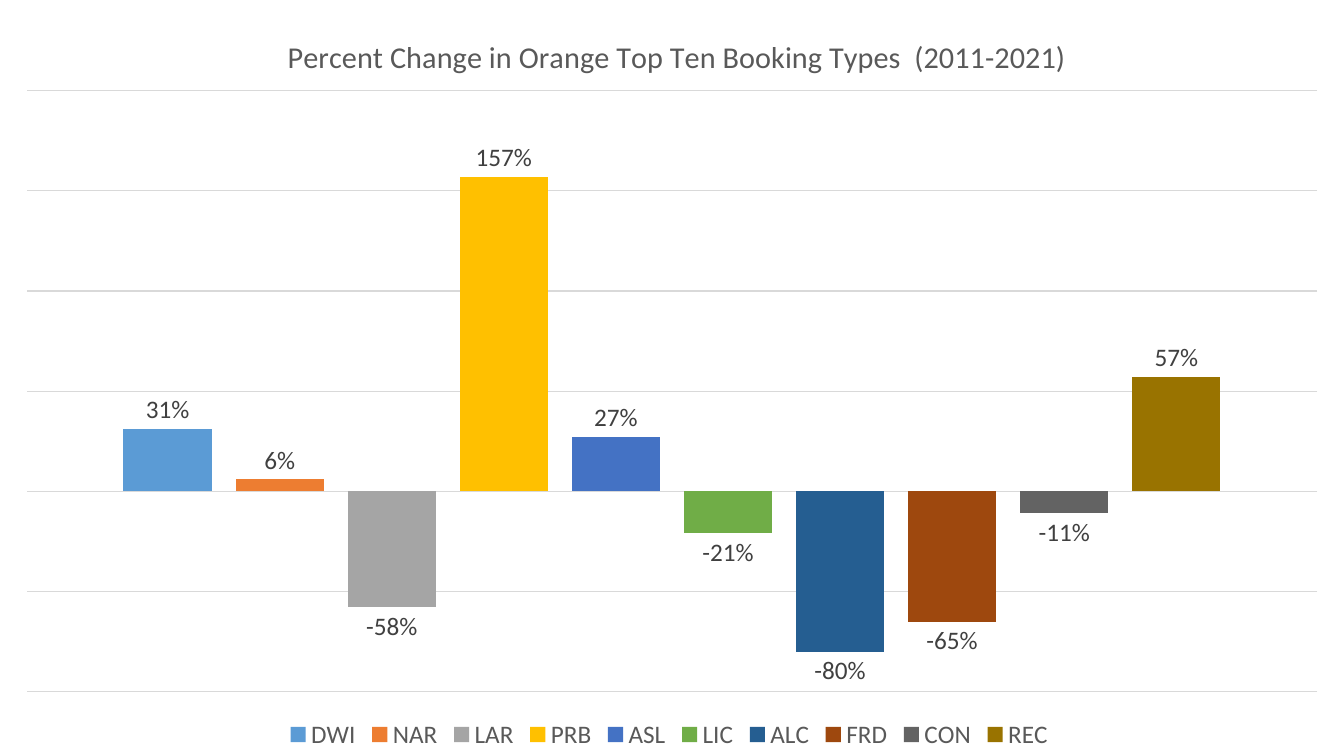
from lxml.etree import SubElement
from pptx import Presentation
from pptx.chart.data import CategoryChartData
from pptx.dml.color import RGBColor
from pptx.enum.chart import XL_CHART_TYPE, XL_LABEL_POSITION, XL_LEGEND_POSITION
from pptx.oxml.ns import qn
from pptx.util import Pt

COLOURS = {
    "text": "595959", "label": "404040", "grid": "D9D9D9",
    "DWI": "5B9BD5", "NAR": "ED7D31", "LAR": "A5A5A5", "PRB": "FFC000",
    "ASL": "4472C4", "LIC": "70AD47", "ALC": "255E91", "FRD": "9E480E",
    "CON": "636363", "REC": "997300",
}
CHANGES = {
    "DWI": 0.31, "NAR": 0.06, "LAR": -0.58, "PRB": 1.57, "ASL": 0.27,
    "LIC": -0.21, "ALC": -0.8, "FRD": -0.65, "CON": -0.11, "REC": 0.57,
}
TITLE = "Percent Change in Orange Top Ten Booking Types  (2011-2021)"
PAGE_WIDTH, PAGE_HEIGHT = 960, 540


def colour(name):
    """Return the named colour."""
    return RGBColor.from_string(COLOURS[name])


def style_font(font, size, name):
    """Set the face, size and colour of a font."""
    font.name = "Calibri"
    font.size = Pt(size)
    font.bold = False
    font.color.rgb = colour(name)


def set_layout(parent, index, **fractions):
    """Place a chart part by fractions of the chart area."""
    for old in parent.findall(qn("c:layout")):
        parent.remove(old)
    layout = SubElement(parent, qn("c:layout"))
    parent.insert(index, layout)
    manual = SubElement(layout, qn("c:manualLayout"))
    if "w" in fractions:
        SubElement(manual, qn("c:layoutTarget")).set("val", "inner")
    for axis in ("x", "y"):
        SubElement(manual, qn(f"c:{axis}Mode")).set("val", "edge")
    for key, value in fractions.items():
        SubElement(manual, qn(f"c:{key}")).set("val", str(value))


def style_title(chart):
    """Write the chart title."""
    chart.has_title = True
    frame = chart.chart_title.text_frame
    frame.text = TITLE
    style_font(frame.paragraphs[0].runs[0].font, 21.6, "text")
    chart.chart_title.include_in_layout = False
    set_layout(chart.chart_title._element, 1, x=0.21, y=0.04)


def style_legend(chart):
    """Put the legend along the bottom edge."""
    chart.has_legend = True
    legend = chart.legend
    legend.position = XL_LEGEND_POSITION.BOTTOM
    legend.include_in_layout = False
    style_font(legend.font, 18, "text")


def style_axes(chart):
    """Hide both axes and keep the horizontal gridlines."""
    chart.category_axis.visible = False
    values = chart.value_axis
    values.visible = False
    values.minimum_scale, values.maximum_scale, values.major_unit = -1, 2, 0.5
    values.tick_labels.number_format = "0%"
    values.tick_labels.number_format_is_linked = False
    line = values.major_gridlines.format.line
    line.width = Pt(0.75)
    line.color.rgb = colour("grid")


def style_bars(plot):
    """Colour and label one bar for each booking type."""
    plot.gap_width = 219
    plot.overlap = -27
    plot.vary_by_categories = False
    for series in plot.series:
        series.invert_if_negative = False
        series.format.fill.solid()
        series.format.fill.fore_color.rgb = colour(series.name)
        labels = series.data_labels
        labels.show_value = True
        labels.number_format = "0%"
        labels.number_format_is_linked = False
        labels.position = XL_LABEL_POSITION.OUTSIDE_END
        style_font(labels.font, 18, "label")


def add_booking_chart(page, left, top, width, height):
    """Draw the booking chart in the given box."""
    data = CategoryChartData(number_format="0%")
    data.categories = ["1"]
    for name, change in CHANGES.items():
        data.add_series(name, [change])
    chart = page.shapes.add_chart(
        XL_CHART_TYPE.COLUMN_CLUSTERED, Pt(left), Pt(top), Pt(width), Pt(height), data
    ).chart
    chart.font.name = "Calibri"
    chart.font.size = Pt(18)
    style_title(chart)
    style_legend(chart)
    style_axes(chart)
    style_bars(chart.plots[0])
    plot_area = chart._chartSpace.find(f".//{qn('c:plotArea')}")
    set_layout(plot_area, 0, x=0.02, y=0.12, w=0.96, h=0.795)
    set_layout(chart.legend._element, 1, x=0.21, y=0.95)


def main():
    """Build and save the deck."""
    deck = Presentation()
    deck.slide_width, deck.slide_height = Pt(PAGE_WIDTH), Pt(PAGE_HEIGHT)
    page = deck.slides.add_slide(deck.slide_layouts[6])
    add_booking_chart(page, 0, 0, PAGE_WIDTH, PAGE_HEIGHT)
    deck.save("out.pptx")


if __name__ == "__main__":
    main()
